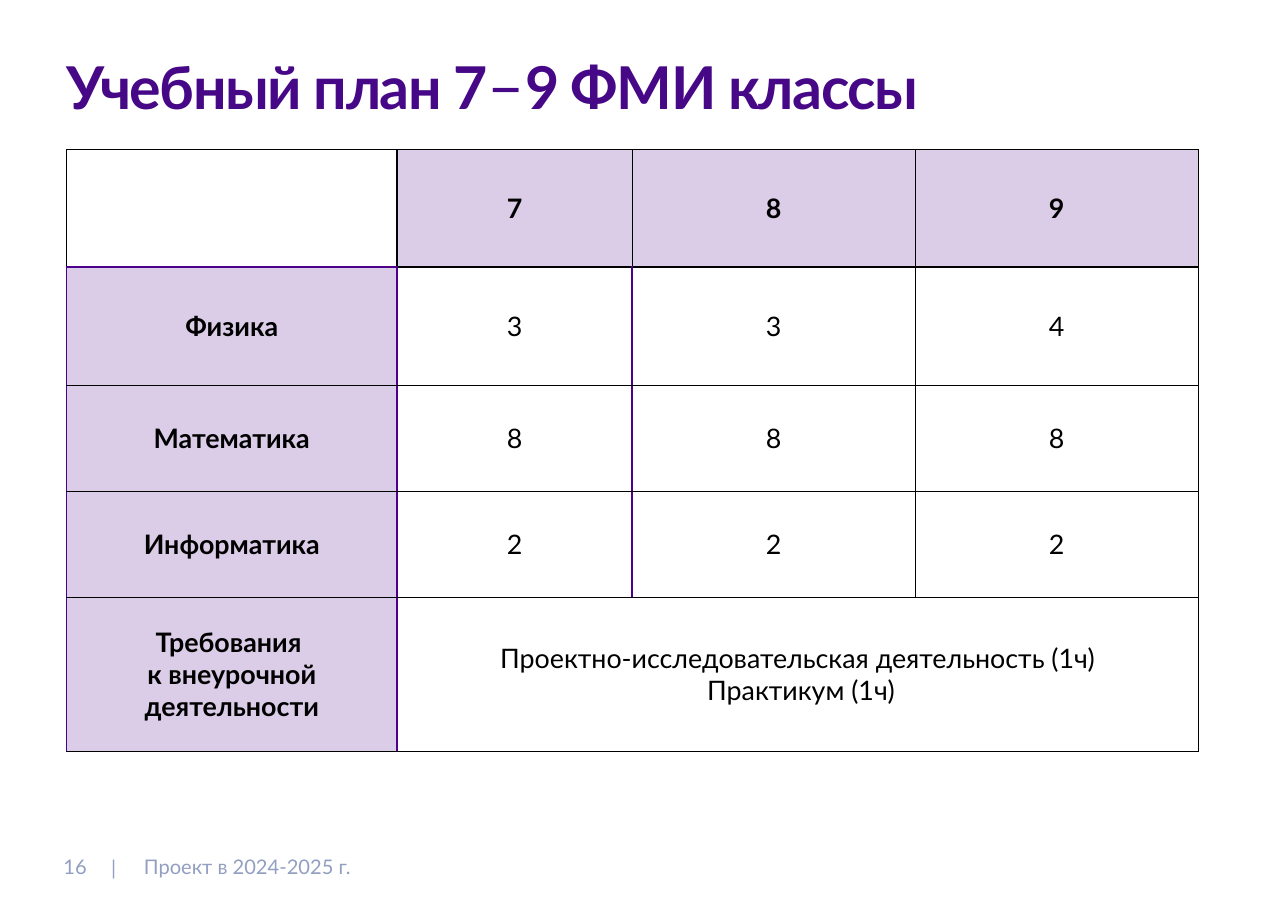
from pptx import Presentation
from pptx.dml.color import RGBColor
from pptx.enum import text
from pptx.oxml import ns, parse_xml
from pptx.util import Inches, Pt

COLORS = {"title": "460886", "footer": "939FC1", "accent": "4D008C", "black": "000000"}
LEFT, CENTER = text.PP_ALIGN.LEFT, text.PP_ALIGN.CENTER
TOP, MIDDLE, BOTTOM = text.MSO_ANCHOR.TOP, text.MSO_ANCHOR.MIDDLE, text.MSO_ANCHOR.BOTTOM
FIXED, GROW = text.MSO_AUTO_SIZE.NONE, text.MSO_AUTO_SIZE.SHAPE_TO_FIT_TEXT
MARGINS = ("margin_left", "margin_right", "margin_top", "margin_bottom")


def add_run(p, wording, size, color, bold=False):
    r = p.add_run()
    r.text = wording
    for name, value in {"name": "Lato", "size": Pt(size), "bold": bold}.items():
        setattr(r.font, name, value)
    r.font.color.rgb = RGBColor.from_string(COLORS[color])
    return r


def add_box(at, anchor, align, wrap, fit):
    """Add an empty text box and return its first paragraph."""
    tf = s.shapes.add_textbox(*[Inches(v) for v in at]).text_frame
    tf.word_wrap, tf.vertical_anchor, tf.auto_size = wrap, anchor, fit
    for margin in MARGINS:
        setattr(tf, margin, Inches(0.06))
    tf.paragraphs[0].alignment = align
    return tf.paragraphs[0]


prs = Presentation()
prs.slide_width, prs.slide_height = Inches(26.67), Inches(18.86)
s = prs.slides.add_slide(prs.slide_layouts[6])

# Title
p = add_box((1.32, 1.18, 24.03, 1.92), TOP, LEFT, True, FIXED)
p.line_spacing = 0.8
for wording, size, bold in [("Учебный план 7", 88, True), ("–", 96, False), ("9 ФМИ классы", 88, True)]:
    r = add_run(p, wording, size, "title", bold)
    r.font._element.set("spc", "-210")

# Curriculum table: paragraphs of a cell are separated by line feeds
rows = [
    ["", "7", "8", "9"],
    ["Физика", "3", "3", "4"],
    ["Математика", "8", "8", "8"],
    ["Информатика", "2", "2", "2"],
    ["Требования \nк внеурочной деятельности",
     "Проектно-исследовательская деятельность (1ч)\n Практикум (1ч)", "", ""],
]
widths = [6.84, 4.87, 5.86, 5.86]
heights = [2.43, 2.45, 2.19, 2.19, 3.2]
table = s.shapes.add_table(len(rows), len(widths), Inches(1.38), Inches(3.1),
                           Inches(sum(widths)), Inches(sum(heights))).table
table.first_row = table.horz_banding = False
for column, width in zip(table.columns, widths):
    column.width = Inches(width)
for row, height in zip(table.rows, heights):
    row.height = Inches(height)
table.cell(4, 1).merge(table.cell(4, 3))

for i, row in enumerate(rows):
    for j, wording in enumerate(row):
        cell = table.cell(i, j)
        cell.vertical_anchor = MIDDLE
        for margin in MARGINS:
            setattr(cell, margin, Inches(0.06))

        header = (i == 0) != (j == 0)
        borders = {side: ("black", 1) for side in "LRTB"}
        if i == 0:
            borders["B"] = ("black" if j else "accent", 3)
            if j < 2:
                borders["L" if j else "R"] = ("black", 3)
        else:
            if j == 0:
                borders["L"] = ("accent", 1)
            if j in (1, 2):
                borders["L"] = ("accent", 3)
            if j == 0 or (j == 1 and i < 4):
                borders["R"] = ("accent", 3)
            if i == 1:
                borders["T"] = ("black" if j else "accent", 3)
        tc_pr = cell._tc.get_or_add_tcPr()
        for side, (color, width) in borders.items():
            tc_pr.append(parse_xml(
                f'<a:ln{side} {ns.nsdecls("a")} w="{Pt(width)}"><a:solidFill>'
                f'<a:srgbClr val="{COLORS[color]}"/></a:solidFill></a:ln{side}>'))

        if header:
            cell.fill.solid()
            cell.fill.fore_color.rgb = RGBColor.from_string(COLORS["accent"])
            tint = tc_pr.find(ns.qn("a:solidFill")).find(ns.qn("a:srgbClr"))
            tint.append(parse_xml(f'<a:alpha {ns.nsdecls("a")} val="20000"/>'))
        else:
            cell.fill.background()

        tf = cell.text_frame
        for k, line in enumerate(wording.split("\n") if wording else []):
            p = tf.add_paragraph() if k else tf.paragraphs[0]
            p.alignment = CENTER
            add_run(p, line, 40, "black", header)

# Footer
for wording, at, anchor, align, wrap in [
    ("16", (1.23, 17.63, 0.65, 0.62), BOTTOM, CENTER, False),
    ("|", (2.22, 17.64, 0.27, 0.62), MIDDLE, CENTER, False),
    ("Проект в 2024-2025 г.", (2.92, 17.64, 19.03, 0.61), MIDDLE, LEFT, True),
]:
    add_run(add_box(at, anchor, align, wrap, GROW), wording, 30, "footer")

prs.save("out.pptx")
